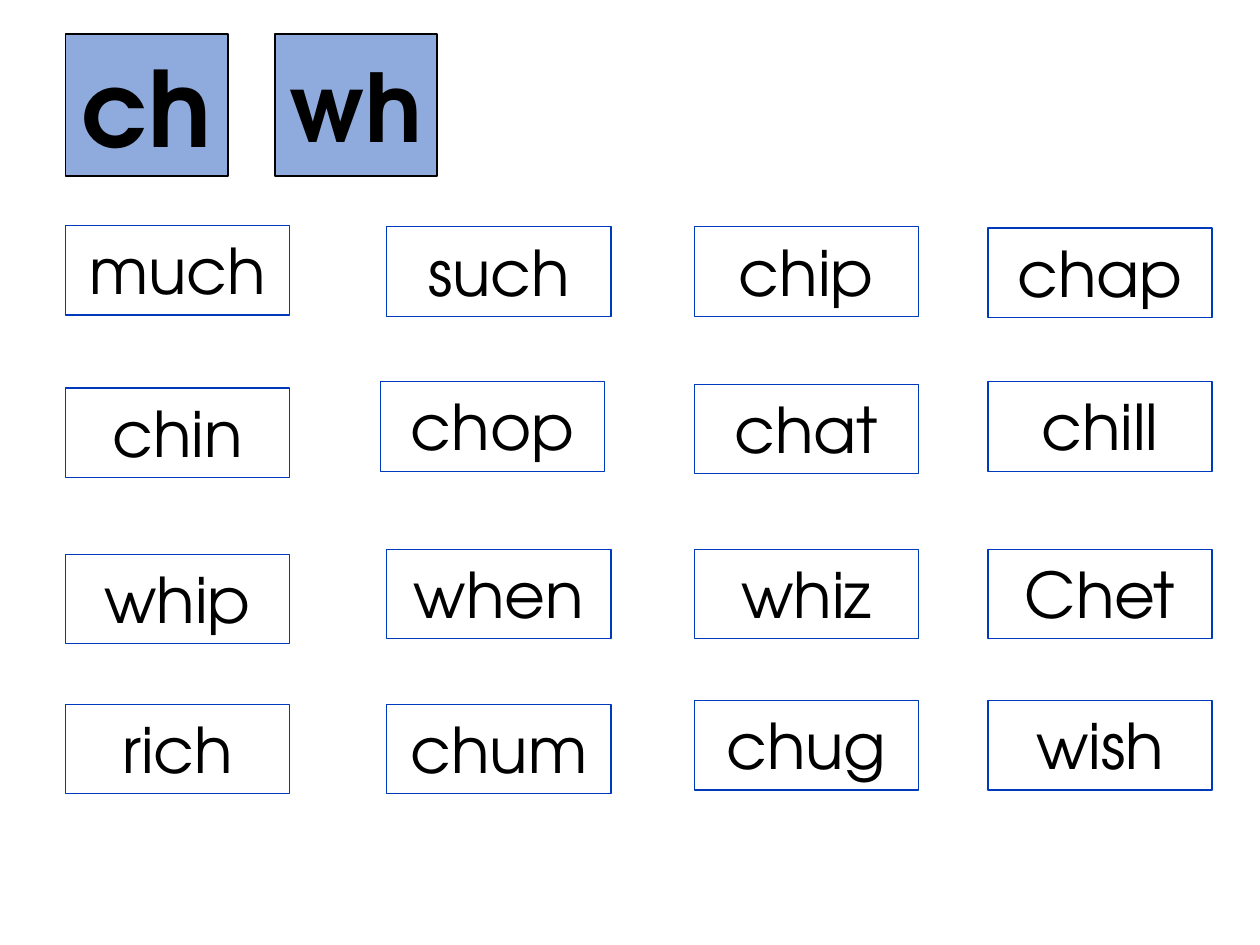
from pptx import Presentation
from pptx.dml.color import RGBColor
from pptx.enum.shapes import MSO_SHAPE
from pptx.enum.text import MSO_ANCHOR, MSO_AUTO_SIZE, PP_ALIGN
from pptx.util import Inches, Pt

FONT = "TeX Gyre Adventor"
COLORS = {"tile": "8FAADC", "word_line": "003ABC", "ink": "000000"}
DIGRAPHS = [("ch", 60), ("wh", 54)]
COLUMN_LEFTS = [0, 2.55, 4.99, 7.32]
WORD_ROWS = [
    [("much", 0), ("such", 0.01), ("chip", 0.01), ("chap", 0.02)],
    [("chin", 1.29), ("chop", 1.24), ("chat", 1.26), ("chill", 1.24)],
    [("whip", 2.61), ("when", 2.57), ("whiz", 2.57), ("Chet", 2.57)],
    [("rich", 3.8), ("chum", 3.8), ("chug", 3.77), ("wish", 3.77)],
]
LEFT_SHIFTS = {"chop": -0.05}


def color(name):
    """Return the named palette colour."""
    return RGBColor.from_string(COLORS[name])


def add_card(slide, box, text, size, line, width, fill=None, bold=False):
    """Draw one outlined rectangle with centred text and return it."""
    card = slide.shapes.add_shape(MSO_SHAPE.RECTANGLE, *map(Inches, box))
    card.shadow.inherit = False
    if fill:
        card.fill.solid()
        card.fill.fore_color.rgb = color(fill)
    else:
        card.fill.background()
    card.line.color.rgb = color(line)
    card.line.width = Pt(width)
    card.text_frame.word_wrap = True
    paragraph = card.text_frame.paragraphs[0]
    paragraph.text = text
    paragraph.alignment = PP_ALIGN.CENTER
    paragraph.font.name = FONT
    paragraph.font.size = Pt(size)
    paragraph.font.bold = bold
    paragraph.font.color.rgb = color("ink")
    return card


def add_digraph_tiles(slide, left, top, width, height):
    """Place the digraph tiles side by side across the box."""
    tile_width = 1.29
    step = (width - tile_width) / (len(DIGRAPHS) - 1)
    for index, (digraph, size) in enumerate(DIGRAPHS):
        tile = add_card(slide, (left + index * step, top, tile_width, height),
                        digraph, size, "ink", 1, fill="tile", bold=True)
        tile.text_frame.vertical_anchor = MSO_ANCHOR.MIDDLE


def add_word_cards(slide, left, top):
    """Place the word cards in four columns from the given corner."""
    for row in WORD_ROWS:
        for column_left, (word, drop) in zip(COLUMN_LEFTS, row):
            card_left = left + column_left + LEFT_SHIFTS.get(word, 0)
            card = add_card(slide, (card_left, top + drop, 1.78, 0.71),
                            word, 36, "word_line", 0.75)
            card.text_frame.vertical_anchor = MSO_ANCHOR.TOP
            card.text_frame.auto_size = MSO_AUTO_SIZE.SHAPE_TO_FIT_TEXT


def main():
    """Build the word sort slide and save it."""
    presentation = Presentation()
    presentation.slide_width = Inches(10)
    presentation.slide_height = Inches(7.5)
    slide = presentation.slides.add_slide(presentation.slide_layouts[6])
    add_word_cards(slide, 0.52, 1.79)
    add_digraph_tiles(slide, 0.52, 0.27, 2.95, 1.13)
    presentation.save("out.pptx")


if __name__ == "__main__":
    main()
